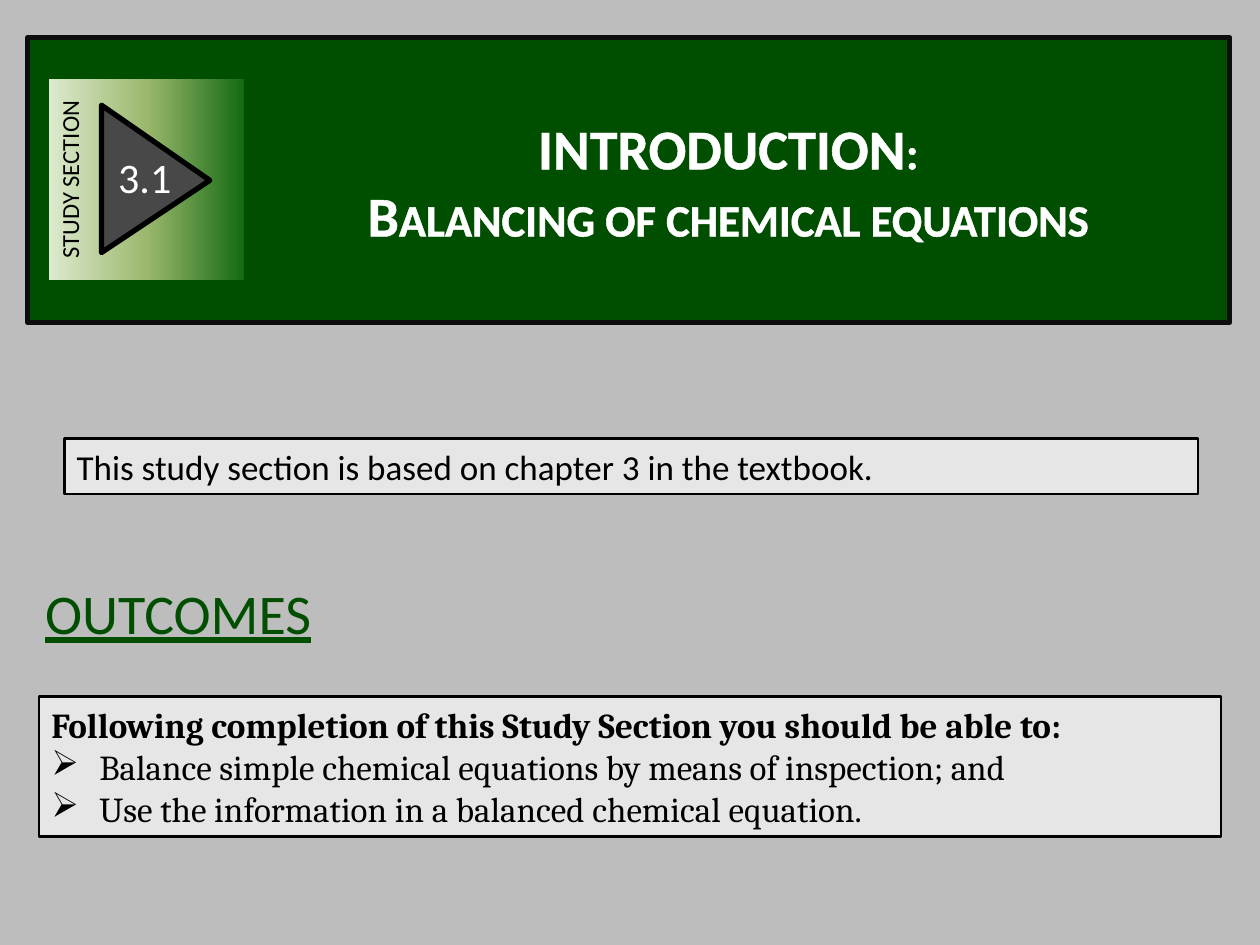
from dataclasses import dataclass
from typing import Optional

from lxml.etree import SubElement
from pptx import Presentation
from pptx.dml.color import RGBColor
from pptx.enum.shapes import MSO_SHAPE as Shape
from pptx.enum.text import MSO_ANCHOR as Anchor, MSO_AUTO_SIZE as AutoSize, PP_ALIGN as Align
from pptx.oxml.ns import qn
from pptx.util import Inches, Pt


@dataclass(frozen=True)
class Theme:
    background: str = "BDBDBD"
    panel: str = "E6E6E6"
    green: str = "004E00"
    arrow: str = "484848"
    border: str = "0D0D0D"
    black: str = "000000"
    white: str = "FFFFFF"
    gradient: tuple = ((0, "DDEBCF"), (50, "9CB86E"), (100, "156B13"))
    sans: str = "Calibri"
    serif: str = "Cambria"
    heading: int = 32
    number: int = 24
    body: int = 20
    label: int = 14


@dataclass(frozen=True)
class Box:
    left: float
    top: float
    width: float
    height: float

    def lengths(self) -> tuple:
        return tuple(Inches(n) for n in (self.left, self.top, self.width, self.height))


@dataclass(frozen=True)
class Line:
    text: str
    bold: bool = False
    bullet: Optional[str] = None


THEME = Theme()


def rgb(color: str) -> RGBColor:
    return RGBColor.from_string(color)


def add_shape(shapes, kind, box: Box, fill: Optional[str] = None,
              line: Optional[str] = None, weight: float = 1.5, rotation: float = 0):
    shape = shapes.add_shape(kind, *box.lengths())
    shape.shadow.inherit = False
    shape.rotation = rotation
    if fill:
        shape.fill.solid()
        shape.fill.fore_color.rgb = rgb(fill)
    if line:
        shape.line.color.rgb = rgb(line)
        shape.line.width = Pt(weight)
    else:
        shape.line.fill.background()
    return shape


def set_gradient(shape, stops: tuple) -> None:
    """Fill from the top of the unrotated shape to its bottom."""
    shape.fill.gradient()
    shape.fill.gradient_angle = 270
    stop_list = shape.element.spPr.find(qn("a:gradFill")).find(qn("a:gsLst"))
    for old_stop in list(stop_list):
        stop_list.remove(old_stop)
    for percent, color in stops:
        stop = SubElement(stop_list, qn("a:gs"), pos=str(percent * 1000))
        SubElement(stop, qn("a:srgbClr"), val=color)


def set_bullet(paragraph, character: str, indent: float = 0.38) -> None:
    properties = paragraph._p.get_or_add_pPr()
    properties.set("marL", str(Inches(indent)))
    properties.set("indent", str(-Inches(indent)))
    SubElement(properties, qn("a:buChar"), char=character)


def set_outline(font, color: str, weight: float) -> None:
    outline = SubElement(font._element, qn("a:ln"), w=str(Pt(weight)))
    fill = SubElement(outline, qn("a:solidFill"))
    SubElement(fill, qn("a:srgbClr"), val=color)
    font._element.insert(0, outline)


def write_text(shape, *lines: Line, size: int = THEME.body, font: str = THEME.sans,
               color: str = THEME.black, align=Align.LEFT, anchor=Anchor.TOP,
               wrap: bool = True, underline: bool = False, small_caps: bool = False,
               outline: Optional[tuple] = None) -> None:
    frame = shape.text_frame
    frame.word_wrap = wrap
    frame.auto_size = AutoSize.SHAPE_TO_FIT_TEXT
    frame.vertical_anchor = anchor
    for index, line in enumerate(lines):
        paragraph = frame.add_paragraph() if index else frame.paragraphs[0]
        paragraph.alignment = align
        if line.bullet:
            set_bullet(paragraph, line.bullet)
        run = paragraph.add_run()
        run.text = line.text
        run.font.size, run.font.name = Pt(size), font
        run.font.bold = line.bold
        run.font.color.rgb = rgb(color)
        if underline:
            run.font.underline = True
        if small_caps:
            run.font._element.set("cap", "small")
        if outline:
            set_outline(run.font, *outline)


def add_text(shapes, box: Box, *lines: Line, **text_format) -> None:
    write_text(shapes.add_textbox(*box.lengths()), *lines, **text_format)


def add_panel(shapes, box: Box, *lines: Line, font: str) -> None:
    panel = add_shape(shapes, Shape.RECTANGLE, box, THEME.panel, THEME.black)
    write_text(panel, *lines, font=font, anchor=Anchor.MIDDLE)


def add_section_badge(shapes, number: str) -> None:
    badge = shapes.add_group_shape().shapes
    label = add_shape(badge, Shape.RECTANGLE, Box(0.36, 0.65, 1.6, 1.55), rotation=270)
    set_gradient(label, THEME.gradient)
    write_text(label, Line("STUDY SECTION"), size=THEME.label, align=Align.CENTER)
    arrow = add_shape(badge, Shape.ISOSCELES_TRIANGLE, Box(0.65, 0.99, 1.17, 0.86),
                      THEME.arrow, THEME.black, weight=3, rotation=90)
    arrow.adjustments[0] = 0.51
    add_text(badge, Box(0.84, 1.15, 0.63, 0.5), Line(number),
             size=THEME.number, color=THEME.white, wrap=False)


def main() -> None:
    presentation = Presentation()
    presentation.slide_width, presentation.slide_height = Inches(10), Inches(7.5)
    slide = presentation.slides.add_slide(presentation.slide_layouts[6])
    slide.background.fill.solid()
    slide.background.fill.fore_color.rgb = rgb(THEME.background)
    shapes = slide.shapes

    # Textbook reference
    add_panel(shapes, Box(0.51, 3.48, 9, 0.44),
              Line("This study section is based on chapter 3 in the textbook."),
              font=THEME.sans)

    # Title banner
    add_shape(shapes, Shape.RECTANGLE, Box(0.22, 0.3, 9.54, 2.26),
              THEME.green, THEME.border, weight=3)
    add_text(shapes, Box(2.11, 0.85, 7.34, 1.18),
             Line("INTRODUCTION:", bold=True),
             Line("Balancing of chemical equations", bold=True),
             size=THEME.heading, color=THEME.white, align=Align.CENTER,
             small_caps=True, outline=(THEME.white, 0.75))
    add_section_badge(shapes, "3.1")

    # Outcomes
    add_text(shapes, Box(0.26, 4.54, 2.67, 0.64), Line("OUTCOMES"),
             size=THEME.heading, color=THEME.green, underline=True,
             outline=(THEME.black, 0.25))
    add_panel(shapes, Box(0.31, 5.53, 9.38, 1.11),
              Line("Following completion of this Study Section you should be able to:", bold=True),
              Line("Balance simple chemical equations by means of inspection; and", bullet="➢"),
              Line("Use the information in a balanced chemical equation.", bullet="➢"),
              font=THEME.serif)

    presentation.save("out.pptx")


if __name__ == "__main__":
    main()
